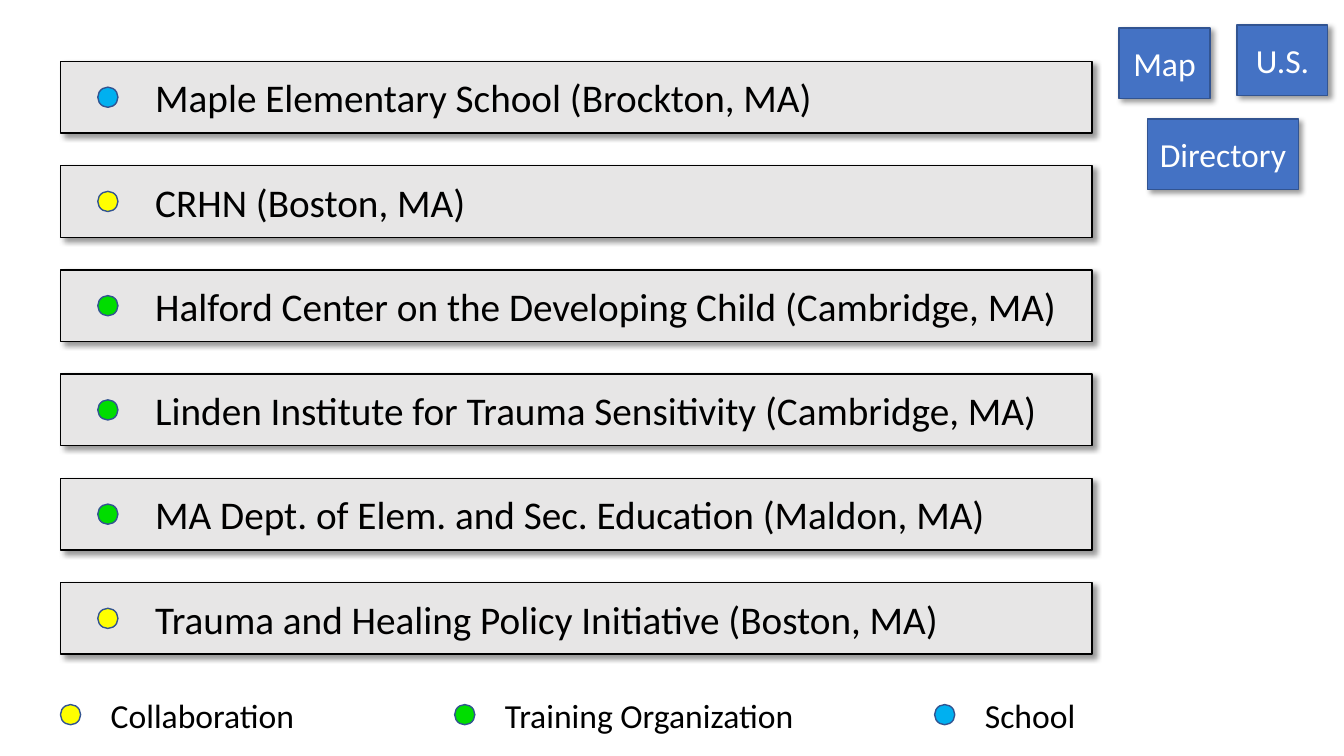
from pptx import Presentation
from pptx import util as u
from pptx.dml.color import RGBColor
from pptx.enum import shapes, text
from pptx.oxml import parse_xml
from pptx.oxml.ns import nsdecls

BLACK, WHITE, GREY, BLUE, EDGE = "000000", "FFFFFF", "E7E6E6", "4472C4", "325491"
KINDS = {"Collaboration": "FFFF00", "Training Organization": "00DD00", "School": "00B0F0"}
PLACES = [
    ("Maple Elementary School (Brockton, MA)", "School"),
    ("CRHN (Boston, MA)", "Collaboration"),
    ("Halford Center on the Developing Child (Cambridge, MA)", "Training Organization"),
    ("Linden Institute for Trauma Sensitivity (Cambridge, MA)", "Training Organization"),
    ("MA Dept. of Elem. and Sec. Education (Maldon, MA)", "Training Organization"),
    ("Trauma and Healing Policy Initiative (Boston, MA)", "Collaboration"),
]
DOT = 0.2


def rgb(value):
    return RGBColor.from_string(value)


def add_shape(s, kind, x, y, w, h, fill, line):
    sp = s.shapes.add_shape(kind, *map(u.Inches, (x, y, w, h)))
    sp.fill.solid()
    sp.fill.fore_color.rgb = rgb(fill)
    sp.line.color.rgb = rgb(line)
    sp.line.width = u.Pt(1)
    sp.shadow.inherit = False
    return sp


def add_shadow(sp):
    sp._element.spPr.find("{*}effectLst").append(parse_xml(
        f'<a:outerShdw {nsdecls("a")} blurRad="{u.Pt(4)}" dist="{u.Pt(3)}" dir="2700000" '
        'algn="tl" rotWithShape="0">'
        f'<a:srgbClr val="{BLACK}"><a:alpha val="40000"/></a:srgbClr></a:outerShdw>'))


def write(sp, words, size, color, align):
    tf = sp.text_frame
    tf.word_wrap = False
    tf.vertical_anchor = text.MSO_ANCHOR.MIDDLE
    p = tf.paragraphs[0]
    p.text = words
    p.alignment = align
    p.font.name = "Calibri"
    p.font.size = u.Pt(size)
    p.font.color.rgb = rgb(color)


def add_box(s, x, y, w, h, fill, line):
    sp = add_shape(s, shapes.MSO_SHAPE.RECTANGLE, x, y, w, h, fill, line)
    add_shadow(sp)
    return sp


def add_dot(s, x, y, kind):
    add_shape(s, shapes.MSO_SHAPE.OVAL, x, y, DOT, DOT, KINDS[kind], EDGE)


def add_place_list(s, x, y, w, h):
    bar_h = 0.71
    pitch = (h - bar_h) / (len(PLACES) - 1)
    for i, (name, kind) in enumerate(PLACES):
        top = y + i * pitch
        bar = add_box(s, x, top, w, bar_h, GREY, BLACK)
        bar.text_frame.margin_left = u.Inches(0.94)
        write(bar, name, 28, BLACK, text.PP_ALIGN.LEFT)
        add_dot(s, x + 0.37, top + (bar_h - DOT) / 2, kind)


def add_legend(s, x, y, h):
    columns = [(0, 2.34), (3.91, 3.19), (8.67, 1.17)]
    for kind, (dx, w) in zip(KINDS, columns):
        add_dot(s, x + dx, y + (h - DOT) / 2, kind)
        label = s.shapes.add_textbox(*map(u.Inches, (x + dx + 0.4, y, w, h)))
        write(label, kind, 24, BLACK, text.PP_ALIGN.LEFT)


def add_buttons(s, x, y):
    for name, dx, dy, w in [("Map", 0, 0.03, 0.9), ("U.S.", 1.17, 0, 0.9),
                            ("Directory", 0.28, 0.93, 1.5)]:
        button = add_box(s, x + dx, y + dy, w, 0.7, BLUE, EDGE)
        write(button, name, 24, WHITE, text.PP_ALIGN.CENTER)


def main():
    prs = Presentation()
    prs.slide_width, prs.slide_height = u.Inches(13.33), u.Inches(7.5)
    s = prs.slides.add_slide(prs.slide_layouts[6])
    add_place_list(s, 0.6, 0.61, 10.23, 5.88)
    add_legend(s, 0.6, 6.84, 0.5)
    add_buttons(s, 11.1, 0.25)
    prs.save("out.pptx")


if __name__ == "__main__":
    main()
